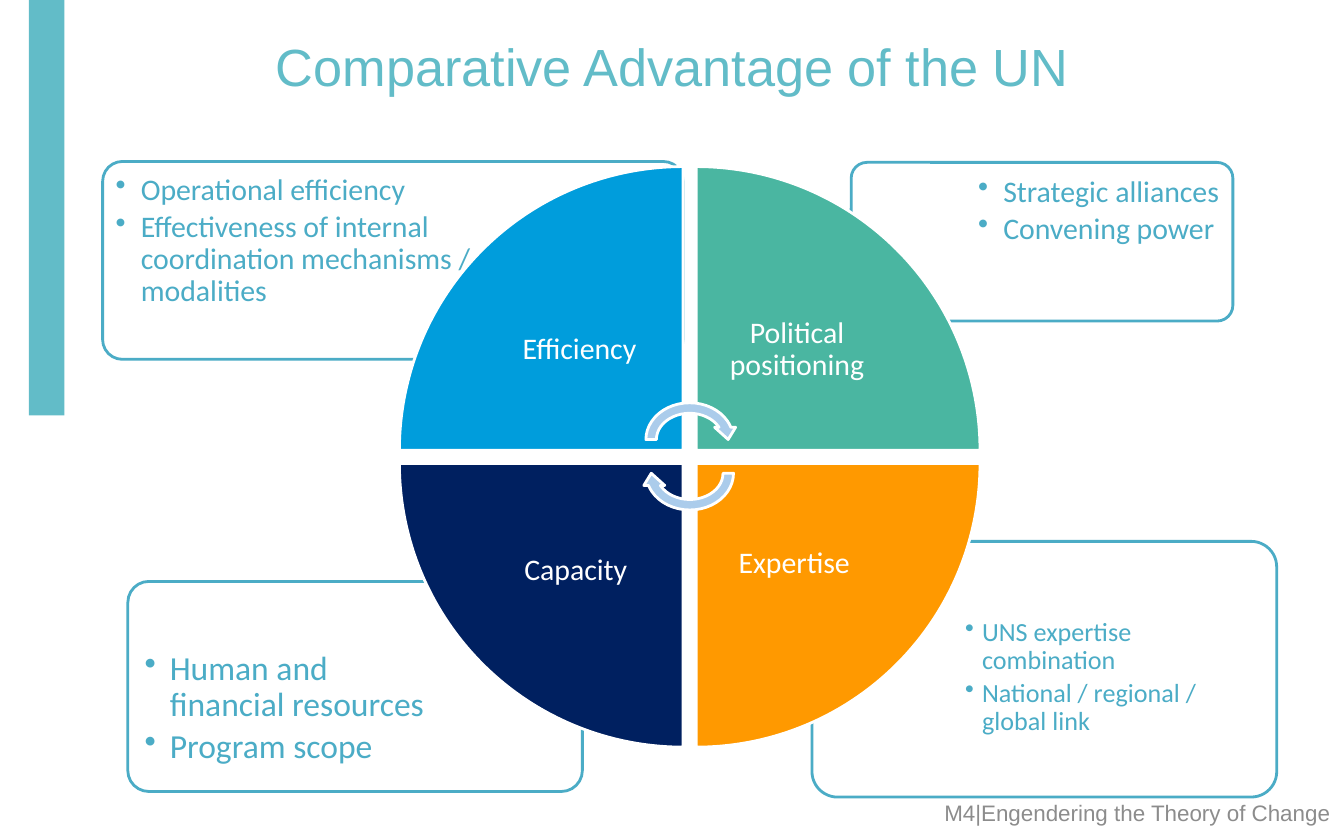
from dataclasses import dataclass

from lxml import etree
from pptx import Presentation
from pptx.dml.color import RGBColor
from pptx.enum import shapes, text
from pptx.oxml import ns
from pptx.util import Pt

MSO = shapes.MSO_SHAPE
ALIGN = text.PP_ALIGN
ANCHOR = text.MSO_ANCHOR
Box = tuple[float, float, float, float]  # left, top, width, height in points


@dataclass(frozen=True)
class Theme:
    accent: str = "62BCC8"
    card: str = "4BACC6"
    white: str = "FFFFFF"
    footer: str = "8C8C8C"
    arrow: str = "ABCCEB"
    head_font: str = "Arial"
    body_font: str = "Calibri"
    title_size: float = 28
    label_size: float = 16
    footer_size: float = 12
    line: float = 1.5


@dataclass(frozen=True)
class Card:
    frame: Box
    text_box: Box
    inset: float
    size: float
    indent: float
    items: tuple[str, ...]
    filled: bool = True


@dataclass(frozen=True)
class Quadrant:
    label: str
    color: str
    col: int
    row: int
    rotation: int
    nudge: tuple[float, float] = (0, 0)


T = Theme()

CARDS = (
    Card((435, 290, 249, 137), (512.6, 327, 168.5, 96.5), 4.5, 14, 9,
         ("UNS expertise combination", "National / regional / global link")),
    Card((68.5, 311.5, 243.5, 112.5), (70.5, 342, 165.5, 79), 7, 18, 13.5,
         ("Human and financial resources", "Program scope"), filled=False),
    Card((456, 87, 204.5, 85), (519, 89.5, 140, 60), 5, 16, 13.5,
         ("Strategic alliances", "Convening power")),
    Card((55, 86.5, 311, 106), (57, 88.5, 213, 75), 5, 16, 13.5,
         ("Operational efficiency",
          "Effectiveness of internal coordination mechanisms / modalities")),
)

QUADRANTS = (
    Quadrant("Efficiency", "009DDC", 0, 0, 0, (-1.5, 0)),
    Quadrant("Political positioning", "4AB6A1", 1, 0, 90),
    Quadrant("Expertise", "FF9900", 1, 1, 180, (-1.5, 0)),
    Quadrant("Capacity", "002060", 0, 1, 270, (-3.5, 3.5)),
)

WHEEL_LEFT, WHEEL_TOP = 214, 89.25
WEDGE, GAP, LABEL = 152, 7, 108
ARROW_W, ARROW_H = 52.5, 45


def add_shape(s, kind, box: Box, fill: str | None = None, line: str | None = None,
              rotation: float = 0):
    sp = s.shapes.add_shape(kind, *map(Pt, box))
    sp.shadow.inherit = False
    sp.rotation = rotation
    if fill:
        sp.fill.solid()
        sp.fill.fore_color.rgb = RGBColor.from_string(fill)
    else:
        sp.fill.background()
    if line:
        sp.line.color.rgb = RGBColor.from_string(line)
        sp.line.width = Pt(T.line)
    else:
        sp.line.fill.background()
    return sp


def set_bullet(p, indent: float) -> None:
    p.level = 1
    pPr = p._p.get_or_add_pPr()
    pPr.set("marL", str(Pt(indent)))
    pPr.set("indent", str(-Pt(indent)))
    etree.SubElement(pPr, ns.qn("a:buChar")).set("char", "•")


def add_text(s, box: Box, lines: tuple[str, ...], *, size: float, color: str,
             font: str = T.body_font, align=ALIGN.LEFT, anchor=ANCHOR.TOP,
             insets: Box = (7.2, 3.6, 7.2, 3.6), spacing: float = 1,
             after: float = 0, bullet_indent: float = 0) -> None:
    tf = s.shapes.add_textbox(*map(Pt, box)).text_frame
    tf.word_wrap = True
    tf.vertical_anchor = anchor
    tf.margin_left, tf.margin_top, tf.margin_right, tf.margin_bottom = map(Pt, insets)
    for i, line in enumerate(lines):
        p = tf.add_paragraph() if i else tf.paragraphs[0]
        p.alignment = align
        p.line_spacing = spacing
        p.space_after = Pt(after)
        if bullet_indent:
            set_bullet(p, bullet_indent)
        r = p.add_run()
        r.text = line
        r.font.size = Pt(size)
        r.font.name = font
        r.font.color.rgb = RGBColor.from_string(color)


def draw_card(s, card: Card) -> None:
    sp = add_shape(s, MSO.ROUNDED_RECTANGLE, card.frame,
                   T.white if card.filled else None, T.card)
    sp.adjustments[0] = 0.1
    if card.filled:
        rgb = sp.fill._xPr.find(".//" + ns.qn("a:srgbClr"))
        etree.SubElement(rgb, ns.qn("a:alpha")).set("val", "90000")
    add_text(s, card.text_box, card.items, size=card.size, color=T.card,
             insets=(card.inset,) * 4, spacing=0.9,
             after=round(card.size * 0.17, 1), bullet_indent=card.indent)


def draw_quadrant(s, q: Quadrant) -> None:
    """Draw a wedge with its label box in the corner nearest the wheel's centre."""
    left = WHEEL_LEFT + q.col * (WEDGE + GAP)
    top = WHEEL_TOP + q.row * (WEDGE + GAP)
    add_shape(s, MSO.PIE_WEDGE, (left, top, WEDGE, WEDGE), q.color, T.white, q.rotation)
    label_left = left + (1 - q.col) * (WEDGE - LABEL) + q.nudge[0]
    label_top = top + (1 - q.row) * (WEDGE - LABEL) + q.nudge[1]
    add_text(s, (label_left, label_top, LABEL, LABEL), (q.label,),
             size=T.label_size, color=T.white, align=ALIGN.CENTER,
             anchor=ANCHOR.MIDDLE, insets=(8.5,) * 4, spacing=0.9)


def main() -> None:
    prs = Presentation()
    prs.slide_width, prs.slide_height = Pt(720), Pt(450)
    s = prs.slides.add_slide(prs.slide_layouts[6])

    add_shape(s, MSO.RECTANGLE, (15.5, 0, 19, 222.5), T.accent)
    add_text(s, (36, 16.5, 648, 75), ("Comparative Advantage of the UN",),
             size=T.title_size, color=T.accent, font=T.head_font,
             align=ALIGN.CENTER, insets=(7.2, 2, 7.2, 2))
    add_text(s, (260.5, 421, 459.5, 29), ("M4|Engendering the Theory of Change",),
             size=T.footer_size, color=T.footer, font=T.head_font,
             align=ALIGN.RIGHT, anchor=ANCHOR.MIDDLE)

    for card in CARDS:
        draw_card(s, card)
    for quadrant in QUADRANTS:
        draw_quadrant(s, quadrant)

    arrow_left = WHEEL_LEFT + WEDGE + GAP / 2 - ARROW_W / 2
    for top, rotation in ((213, 0), (231, 180)):
        add_shape(s, MSO.CIRCULAR_ARROW, (arrow_left, top, ARROW_W, ARROW_H),
                  T.arrow, T.white, rotation)

    prs.save("out.pptx")


if __name__ == "__main__":
    main()
